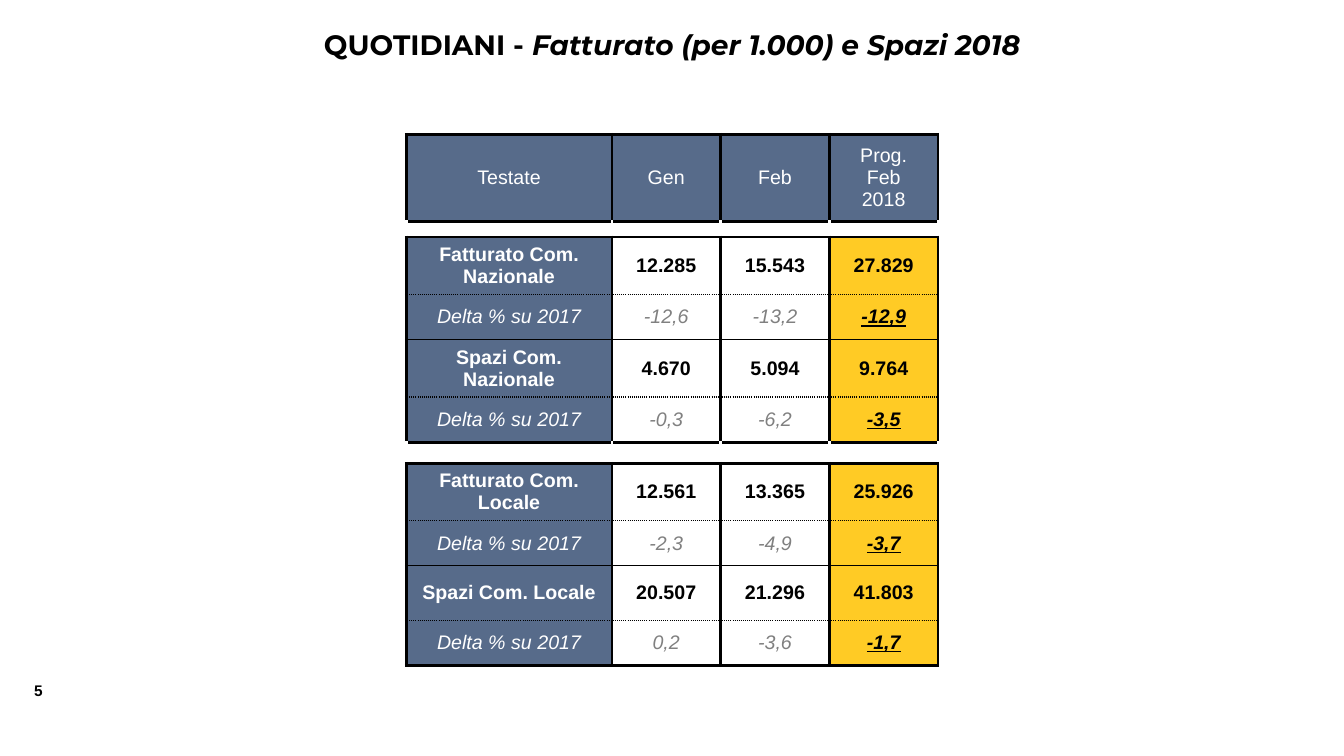
from lxml import etree
from pptx import Presentation
from pptx.dml.color import RGBColor
from pptx.enum.text import MSO_ANCHOR, PP_ALIGN
from pptx.oxml.ns import qn
from pptx.util import Cm, Pt

CENTER = PP_ALIGN.CENTER
LEFT = PP_ALIGN.LEFT
MIDDLE = MSO_ANCHOR.MIDDLE

BLACK = RGBColor(0x00, 0x00, 0x00)
WHITE = RGBColor(0xFF, 0xFF, 0xFF)
GREY = RGBColor(0x80, 0x80, 0x80)
SLATE = RGBColor(0x57, 0x6B, 0x8A)
YELLOW = RGBColor(0xFF, 0xCB, 0x25)

THICK = (BLACK, 2.25, "solid")
THIN = (BLACK, 1, "solid")
DOTTED = (BLACK, 1, "sysDot")
CLEAR = (WHITE, 2.25, "solid")

COLUMN_WIDTHS = [5.18, 2.74, 2.74, 2.74]
HEADINGS = ["Testate", "Gen", "Feb", "Prog.\nFeb\n2018"]
DELTA = "Delta % su 2017"
NATIONAL = [
    (1.44, ["Fatturato Com. Nazionale", "12.285", "15.543", "27.829"]),
    (1.14, [DELTA, "-12,6", "-13,2", "-12,9"]),
    (1.44, ["Spazi Com. Nazionale", "4.670", "5.094", "9.764"]),
    (1.14, [DELTA, "-0,3", "-6,2", "-3,5"]),
]
LOCAL = [
    (1.44, ["Fatturato Com. Locale", "12.561", "13.365", "25.926"]),
    (1.14, [DELTA, "-2,3", "-4,9", "-3,7"]),
    (1.37, ["Spazi Com. Locale", "20.507", "21.296", "41.803"]),
    (1.14, [DELTA, "0,2", "-3,6", "-1,7"]),
]
HEADER_HEIGHT = 2.21
HEADER_GAP = 0.38
GROUP_GAP = 0.53


def write(paragraph, text, size=14, font="Arial", color=BLACK, bold=False,
          italic=False, underline=False, align=CENTER):
    paragraph.alignment = align
    for index, line in enumerate(text.split("\n")):
        if index:
            paragraph.add_line_break()
        run = paragraph.add_run()
        run.text = line
        run.font.size = Pt(size)
        run.font.name = font
        run.font.color.rgb = color
        run.font.bold = bold
        run.font.italic = italic
        run.font.underline = underline


def add_line_of_text(slide, left, top, width, height):
    box = slide.shapes.add_textbox(Cm(left), Cm(top), Cm(width), Cm(height))
    box.text_frame.word_wrap = True
    return box.text_frame.paragraphs[0]


def add_title(slide, left, top, width, height):
    title = add_line_of_text(slide, left, top, width, height)
    style = dict(size=20, font="Montserrat", bold=True)
    write(title, "QUOTIDIANI - ", **style)
    write(title, "Fatturato (per 1.000) e Spazi 2018", italic=True, **style)


def add_page_number(slide, left, top, width, height):
    number = add_line_of_text(slide, left, top, width, height)
    write(number, "5", size=11, bold=True, align=LEFT)


def set_borders(cell, sides, top, bottom):
    properties = cell._tc.get_or_add_tcPr()
    for tag, border in (("a:lnL", sides), ("a:lnR", sides),
                        ("a:lnT", top), ("a:lnB", bottom)):
        color, points, dash = border
        line = etree.SubElement(properties, qn(tag), w=str(Pt(points)))
        fill = etree.SubElement(line, qn("a:solidFill"))
        etree.SubElement(fill, qn("a:srgbClr"), val=str(color))
        etree.SubElement(line, qn("a:prstDash"), val=dash)


def set_margins(cell, horizontal, vertical):
    cell.margin_left = cell.margin_right = Cm(horizontal)
    cell.margin_top = cell.margin_bottom = Cm(vertical)


def fill_cell(cell, text, background, top, bottom, roomy, **style):
    set_borders(cell, THICK, top, bottom)
    if background is None:
        cell.fill.background()
    else:
        cell.fill.solid()
        cell.fill.fore_color.rgb = background
    cell.vertical_anchor = MIDDLE
    if roomy:
        set_margins(cell, 0.25, 0.13)
    else:
        set_margins(cell, 0, 0)
    write(cell.text_frame.paragraphs[0], text, **style)


def fill_header(row):
    for cell, heading in zip(row.cells, HEADINGS):
        fill_cell(cell, heading, SLATE, THICK, THICK, True, color=WHITE)


def fill_gap(row):
    for cell in row.cells:
        set_borders(cell, CLEAR, THICK, THICK)
        set_margins(cell, 0, 0)
        cell.fill.solid()
        cell.fill.fore_color.rgb = WHITE
        paragraph = cell.text_frame.paragraphs[0]
        etree.SubElement(paragraph._p, qn("a:endParaRPr"), sz="400")


def fill_group(rows, group):
    tops = [THICK, DOTTED, THIN, DOTTED]
    bottoms = tops[1:] + [THICK]
    for index, (row, (_, texts)) in enumerate(zip(rows, group)):
        is_delta = index % 2 == 1
        edges = (tops[index], bottoms[index])
        label, *months, total = row.cells
        fill_cell(label, texts[0], SLATE, *edges, True, color=WHITE,
                  bold=not is_delta, italic=is_delta)
        for month, value in zip(months, texts[1:-1]):
            fill_cell(month, value, None, *edges, False,
                      color=GREY if is_delta else BLACK,
                      bold=not is_delta, italic=is_delta)
        fill_cell(total, texts[-1], YELLOW, *edges, False, bold=True,
                  italic=is_delta, underline=is_delta)


def add_revenue_table(slide, left, top):
    heights = [HEADER_HEIGHT, HEADER_GAP, *(height for height, _ in NATIONAL),
               GROUP_GAP, *(height for height, _ in LOCAL)]
    table = slide.shapes.add_table(
        len(heights), len(COLUMN_WIDTHS), Cm(left), Cm(top),
        Cm(sum(COLUMN_WIDTHS)), Cm(sum(heights))).table
    table.first_row = False
    table.horz_banding = False
    for column, width in zip(table.columns, COLUMN_WIDTHS):
        column.width = Cm(width)
    rows = list(table.rows)
    for row, height in zip(rows, heights):
        row.height = Cm(height)
    header, header_gap, *body = rows
    fill_header(header)
    fill_gap(header_gap)
    fill_group(body[:4], NATIONAL)
    fill_gap(body[4])
    fill_group(body[5:], LOCAL)


def main():
    presentation = Presentation()
    presentation.slide_width = Cm(33.87)
    presentation.slide_height = Cm(19.05)
    slide = presentation.slides.add_slide(presentation.slide_layouts[6])
    add_page_number(slide, 0.61, 17.04, 1.07, 0.74)
    add_title(slide, 4.24, 0.58, 25.4, 1.12)
    add_revenue_table(slide, 10.24, 3.38)
    presentation.save("out.pptx")


if __name__ == "__main__":
    main()
